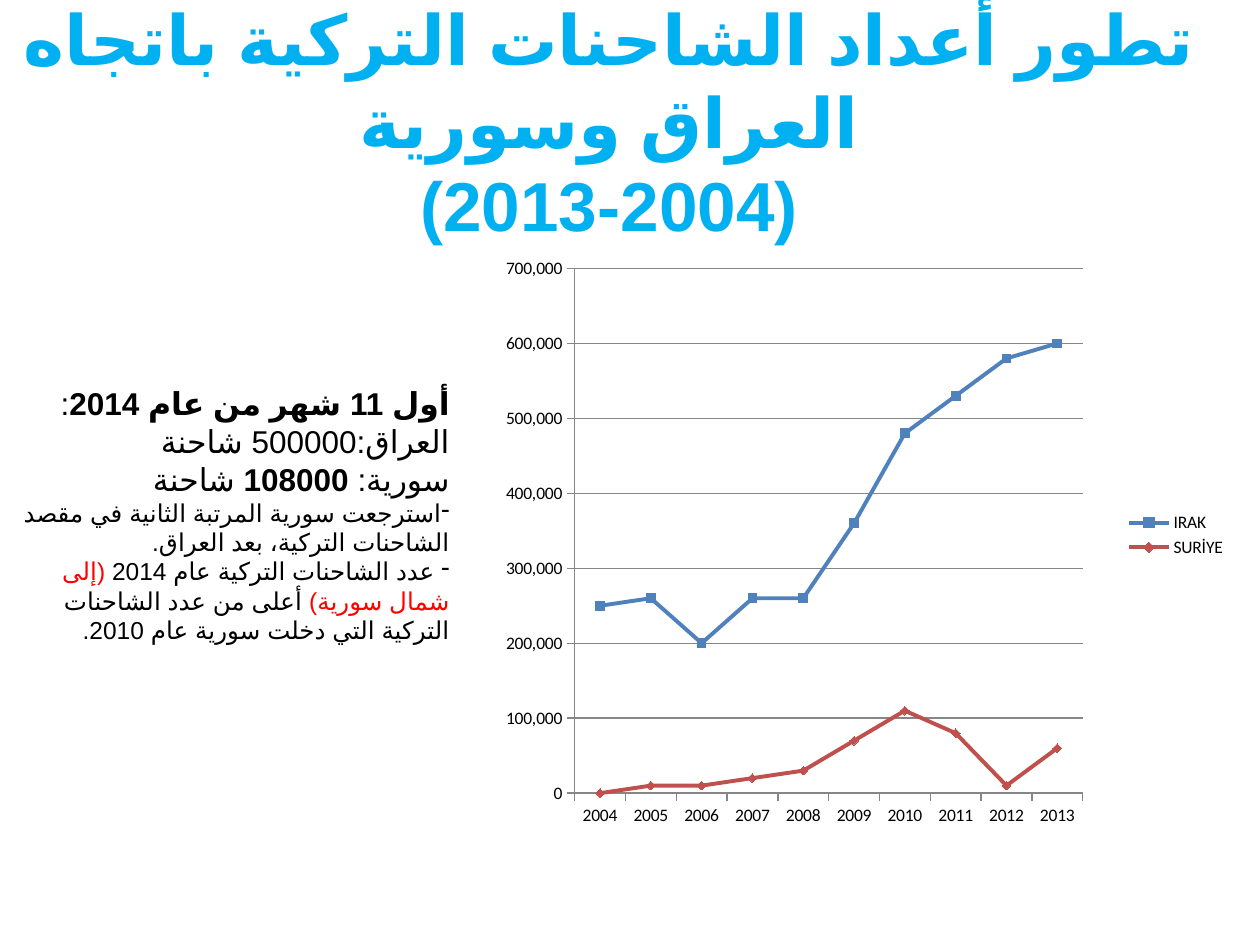
from lxml.etree import SubElement
from pptx import Presentation
from pptx.chart.data import CategoryChartData
from pptx.dml.color import RGBColor
from pptx.enum.chart import XL_CHART_TYPE, XL_LEGEND_POSITION, XL_MARKER_STYLE
from pptx.enum.lang import MSO_LANGUAGE_ID
from pptx.enum.text import MSO_ANCHOR, MSO_AUTO_SIZE, PP_ALIGN
from pptx.oxml import parse_xml
from pptx.oxml.ns import nsdecls, qn
from pptx.util import Emu, Pt

PX = 914400 / 126
FONT = "Calibri"
ARABIC_FONT = "Arial"
BLACK, RED, SKY, GRAY = "000000", "FF0000", "00B0F0", "868686"
YEARS = [str(year) for year in range(2004, 2014)]
TRUCKS = [
    ("IRAK", "4F81BD", XL_MARKER_STYLE.SQUARE,
     [250000, 260000, 200000, 260000, 260000, 360000, 480000, 530000, 580000, 600000]),
    ("SURİYE", "C0504D", XL_MARKER_STYLE.DIAMOND,
     [0, 10000, 10000, 20000, 30000, 70000, 110000, 80000, 10000, 60000]),
]


def px(*lengths):
    """Turn pixel lengths into EMU."""
    return [Emu(round(length * PX)) for length in lengths]


def color(value):
    """Turn a hex string into a colour."""
    return RGBColor.from_string(value)


def add_text(paragraph, text, size=14, bold=False, fill=BLACK):
    """Add one formatted run of Arabic text to a paragraph."""
    run = paragraph.add_run()
    run.text = text
    run.font.name = FONT
    run.font.size = Pt(size)
    run.font.bold = bold
    run.font.color.rgb = color(fill)
    run.font.language_id = MSO_LANGUAGE_ID.ARABIC_SYRIA
    SubElement(run.font._rPr, qn("a:cs")).set("typeface", ARABIC_FONT)


def set_right_to_left(paragraph, align, bullet=None):
    """Make a paragraph run right to left, with an optional bullet."""
    paragraph.alignment = align
    properties = paragraph._p.get_or_add_pPr()
    properties.set("rtl", "1")
    if bullet:
        SubElement(properties, qn("a:buFontTx"))
        SubElement(properties, qn("a:buChar")).set("char", bullet)


def add_frame(slide, box, anchor=MSO_ANCHOR.TOP):
    """Add a wrapping text box and return its text frame."""
    frame = slide.shapes.add_textbox(*px(*box)).text_frame
    frame.word_wrap = True
    frame.vertical_anchor = anchor
    return frame


def add_title(slide):
    """Add the two-part heading."""
    heading = add_frame(slide, (0, 42, 1218, 158), MSO_ANCHOR.MIDDLE).paragraphs[0]
    set_right_to_left(heading, PP_ALIGN.CENTER)
    style = dict(size=39.6, bold=True, fill=SKY)
    add_text(heading, "تطور أعداد الشاحنات التركية باتجاه العراق وسورية", **style)
    heading.add_line_break()
    add_text(heading, "(2004-2013)", **style)


def add_notes_on_2014(slide):
    """Add the 2014 figures and the remarks under them."""
    large, strong = dict(size=18), dict(size=18, bold=True)
    lines = [
        (None, [("أول 11 شهر من عام 2014", strong), (":", large)]),
        (None, [("العراق:\t500000 شاحنة", large)]),
        (None, [("سورية: \t", large), ("108000", strong), (" شاحنة", large)]),
        ("-", [("استرجعت سورية المرتبة الثانية في مقصد الشاحنات التركية، بعد العراق.", {})]),
        ("-", [(" عدد الشاحنات التركية عام 2014 ", {}),
               ("(إلى شمال سورية) ", dict(fill=RED)),
               ("أعلى من عدد الشاحنات التركية التي دخلت سورية عام 2010.", {})]),
    ]
    frame = add_frame(slide, (0, 378, 462, 276))
    frame.auto_size = MSO_AUTO_SIZE.SHAPE_TO_FIT_TEXT
    for index, (bullet, runs) in enumerate(lines):
        paragraph = frame.add_paragraph() if index else frame.paragraphs[0]
        set_right_to_left(paragraph, PP_ALIGN.RIGHT, bullet)
        for text, style in runs:
            add_text(paragraph, text, **style)


def place_plot(chart, x, y, w, h):
    """Fix the inner plot area as fractions of the chart."""
    sizes = "".join(f'<c:{tag} val="{value}"/>' for tag, value in zip("xywh", (x, y, w, h)))
    plot_area = chart._chartSpace.chart.plotArea
    for layout in plot_area.findall(qn("c:layout")):
        plot_area.remove(layout)
    plot_area.insert(0, parse_xml(
        f'<c:layout {nsdecls("c")}><c:manualLayout><c:layoutTarget val="inner"/>'
        f'<c:xMode val="edge"/><c:yMode val="edge"/>{sizes}</c:manualLayout></c:layout>'))


def style_line(line, fill, width):
    """Set the colour and width of a line."""
    line.color.rgb = color(fill)
    line.width = Pt(width)


def add_truck_chart(slide):
    """Add the line chart of trucks per year."""
    data = CategoryChartData(number_format="#,##0")
    data.categories = YEARS
    for name, _, _, counts in TRUCKS:
        data.add_series(name, counts)
    chart = slide.shapes.add_chart(
        XL_CHART_TYPE.LINE_MARKERS, *px(462, 220, 777, 630), data).chart
    chart.has_title = False
    chart.font.name = FONT
    chart.font.size = Pt(10)
    chart.font.color.rgb = color(BLACK)
    chart.has_legend = True
    chart.legend.position = XL_LEGEND_POSITION.RIGHT
    chart.legend.include_in_layout = False
    place_plot(chart, 0.145, 0.077, 0.654, 0.833)

    counts_axis = chart.value_axis
    counts_axis.minimum_scale, counts_axis.maximum_scale = 0, 700000
    counts_axis.major_unit = 100000
    counts_axis.tick_labels.number_format = "#,##0"
    counts_axis.tick_labels.number_format_is_linked = False
    counts_axis.has_major_gridlines = True
    for line in (counts_axis.major_gridlines.format.line,
                 counts_axis.format.line, chart.category_axis.format.line):
        style_line(line, GRAY, 0.8)

    chart.plots[0].vary_by_categories = False
    for series, (_, fill, marker, _) in zip(chart.plots[0].series, TRUCKS):
        series.smooth = False
        style_line(series.format.line, fill, 2.25)
        series.marker.style = marker
        series.marker.size = 5
        series.marker.format.fill.solid()
        series.marker.format.fill.fore_color.rgb = color(fill)
        style_line(series.marker.format.line, fill, 0.75)


def main():
    """Build the slide and save it."""
    deck = Presentation()
    deck.slide_width, deck.slide_height = px(1260, 945)
    slide = deck.slides.add_slide(deck.slide_layouts[6])
    add_title(slide)
    add_truck_chart(slide)
    add_notes_on_2014(slide)
    deck.save("out.pptx")


if __name__ == "__main__":
    main()
